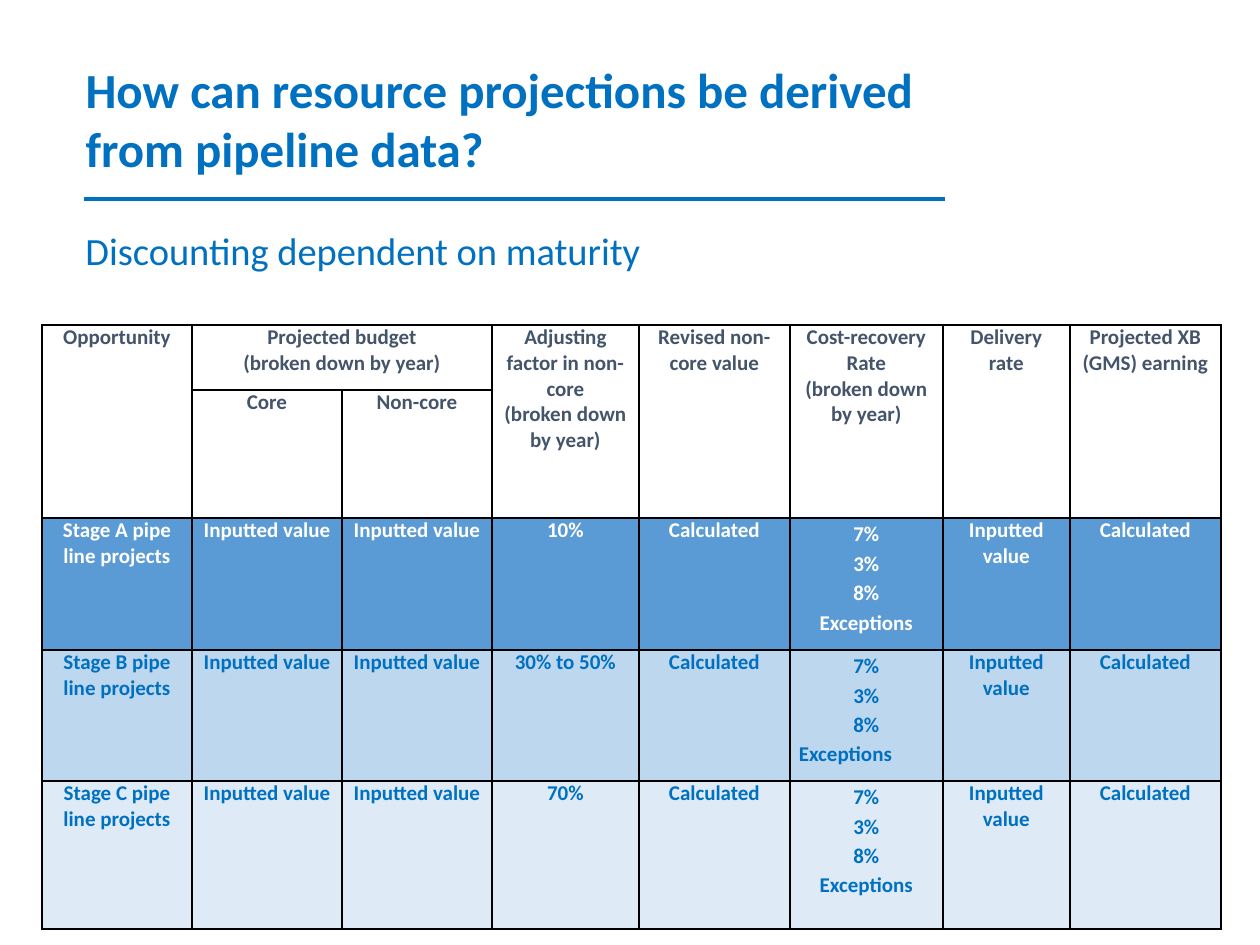
from lxml import etree
from pptx import Presentation
from pptx.dml.color import RGBColor
from pptx.enum.shapes import MSO_CONNECTOR
from pptx.enum.text import MSO_ANCHOR, MSO_AUTO_SIZE, PP_ALIGN
from pptx.oxml.ns import qn
from pptx.util import Pt

EMU_PER_PX = 914400 / 126
FONT = "Calibri"
LEFT, CENTER = PP_ALIGN.LEFT, PP_ALIGN.CENTER
TOP = MSO_ANCHOR.TOP
NO_AUTOFIT = MSO_AUTO_SIZE.NONE
STRAIGHT = MSO_CONNECTOR.STRAIGHT

BLUE = RGBColor(0x00, 0x70, 0xC0)
SLATE = RGBColor(0x44, 0x54, 0x6A)
WHITE = RGBColor(0xFF, 0xFF, 0xFF)
BLACK = RGBColor(0x00, 0x00, 0x00)
STAGE_A_FILL = RGBColor(0x5B, 0x9B, 0xD5)
STAGE_B_FILL = RGBColor(0xBD, 0xD7, 0xEE)
STAGE_C_FILL = RGBColor(0xDE, 0xEB, 0xF7)

COLUMN_WIDTHS = [150, 150, 150, 147, 151, 153, 127, 151]
ROW_HEIGHTS = [65, 128, 132, 131, 148]
CELL_INSET = 9
RATE_COLUMN = 5

BUDGET_COLUMNS = {1: "Core", 2: "Non-core"}
HEADERS = {
    0: "Opportunity",
    1: "Projected budget\n(broken down by year)",
    3: "Adjusting factor in non-core\n(broken down by year)",
    4: "Revised non-core value",
    5: "Cost-recovery\nRate\n(broken down by year)",
    6: "Delivery rate",
    7: "Projected XB (GMS) earning",
}
# Stage, adjusting factor, fill, text colour, alignment of "Exceptions"
STAGES = [
    ("A", "10%", STAGE_A_FILL, WHITE, CENTER),
    ("B", "30% to 50%", STAGE_B_FILL, BLUE, LEFT),
    ("C", "70%", STAGE_C_FILL, BLUE, CENTER),
]


def px(length):
    return round(length * EMU_PER_PX)


def write_text(frame, text, *, size, color, bold=False, align=LEFT,
               last_align=None, line_spacing=None):
    frame.word_wrap = True
    lines = text.split("\n")
    for index, line in enumerate(lines):
        paragraph = frame.paragraphs[0] if index == 0 else frame.add_paragraph()
        is_last = index == len(lines) - 1
        paragraph.alignment = last_align if is_last and last_align else align
        if line_spacing:
            paragraph.line_spacing = line_spacing
        run = paragraph.add_run()
        run.text = line
        run.font.name = FONT
        run.font.size = Pt(size)
        run.font.bold = bold
        run.font.color.rgb = color


def add_heading(slide, left, top, width):
    # Title
    title = slide.shapes.title
    title.left, title.top = px(left), px(top)
    title.width, title.height = px(width), px(145)
    title.text_frame.auto_size = NO_AUTOFIT
    title.text_frame.vertical_anchor = TOP
    write_text(title.text_frame,
               "How can resource projections be derived from pipeline data?",
               size=28, color=BLUE, bold=True)

    # Rule under the title
    rule = slide.shapes.add_connector(
        STRAIGHT, px(left + 872), px(top + 146), px(left + 11), px(top + 146))
    rule.line.color.rgb = BLUE
    rule.line.width = Pt(2)
    etree.SubElement(rule._element.spPr, qn("a:effectLst"))

    # Subtitle
    subtitle = slide.shapes.add_textbox(px(left), px(top + 168), px(width), px(73))
    write_text(subtitle.text_frame, "Discounting dependent on maturity",
               size=22, color=BLUE)


def set_borders(cell):
    properties = cell._tc.get_or_add_tcPr()
    for index, side in enumerate(("lnL", "lnR", "lnT", "lnB")):
        border = etree.Element(qn(f"a:{side}"), w=str(Pt(1)))
        fill = etree.SubElement(border, qn("a:solidFill"))
        etree.SubElement(fill, qn("a:srgbClr"), val=str(BLACK))
        properties.insert(index, border)


def fill_cell(cell, text, color, **text_format):
    write_text(cell.text_frame, text, size=12, color=color, bold=True,
               align=CENTER, **text_format)


def add_projection_table(slide, left, top):
    table = slide.shapes.add_table(
        len(ROW_HEIGHTS), len(COLUMN_WIDTHS), px(left), px(top),
        px(sum(COLUMN_WIDTHS)), px(sum(ROW_HEIGHTS))).table
    table.first_row = table.horz_banding = False
    for column, width in zip(table.columns, COLUMN_WIDTHS):
        column.width = px(width)
    for row, height in zip(table.rows, ROW_HEIGHTS):
        row.height = px(height)

    # Cell fills, borders and insets
    row_fills = [WHITE, WHITE] + [stage[2] for stage in STAGES]
    for row, row_fill in zip(table.rows, row_fills):
        for cell in row.cells:
            set_borders(cell)
            cell.fill.solid()
            cell.fill.fore_color.rgb = row_fill
            cell.margin_left = cell.margin_right = px(CELL_INSET)
            cell.margin_top = cell.margin_bottom = 0

    # Two-level header
    for column, header in HEADERS.items():
        cell = table.cell(0, column)
        cell.merge(table.cell(0, 2) if column in BUDGET_COLUMNS
                   else table.cell(1, column))
        fill_cell(cell, header, SLATE)
    for column, header in BUDGET_COLUMNS.items():
        fill_cell(table.cell(1, column), header, SLATE)

    # One row per pipeline stage
    for row, (stage, factor, _, color, exceptions_align) in enumerate(STAGES, 2):
        values = [f"Stage {stage} pipe line projects", "Inputted value",
                  "Inputted value", factor, "Calculated",
                  "7%\n3%\n8%\nExceptions", "Inputted value", "Calculated"]
        for column, value in enumerate(values):
            rate_format = {}
            if column == RATE_COLUMN:
                rate_format = {"line_spacing": 1.15,
                               "last_align": exceptions_align}
            fill_cell(table.cell(row, column), value, color, **rate_format)


def main():
    presentation = Presentation()
    presentation.slide_width, presentation.slide_height = px(1260), px(945)
    slide = presentation.slides.add_slide(presentation.slide_layouts[5])
    add_heading(slide, 73, 53, 903)
    add_projection_table(slide, 42, 325)
    presentation.save("out.pptx")


if __name__ == "__main__":
    main()
